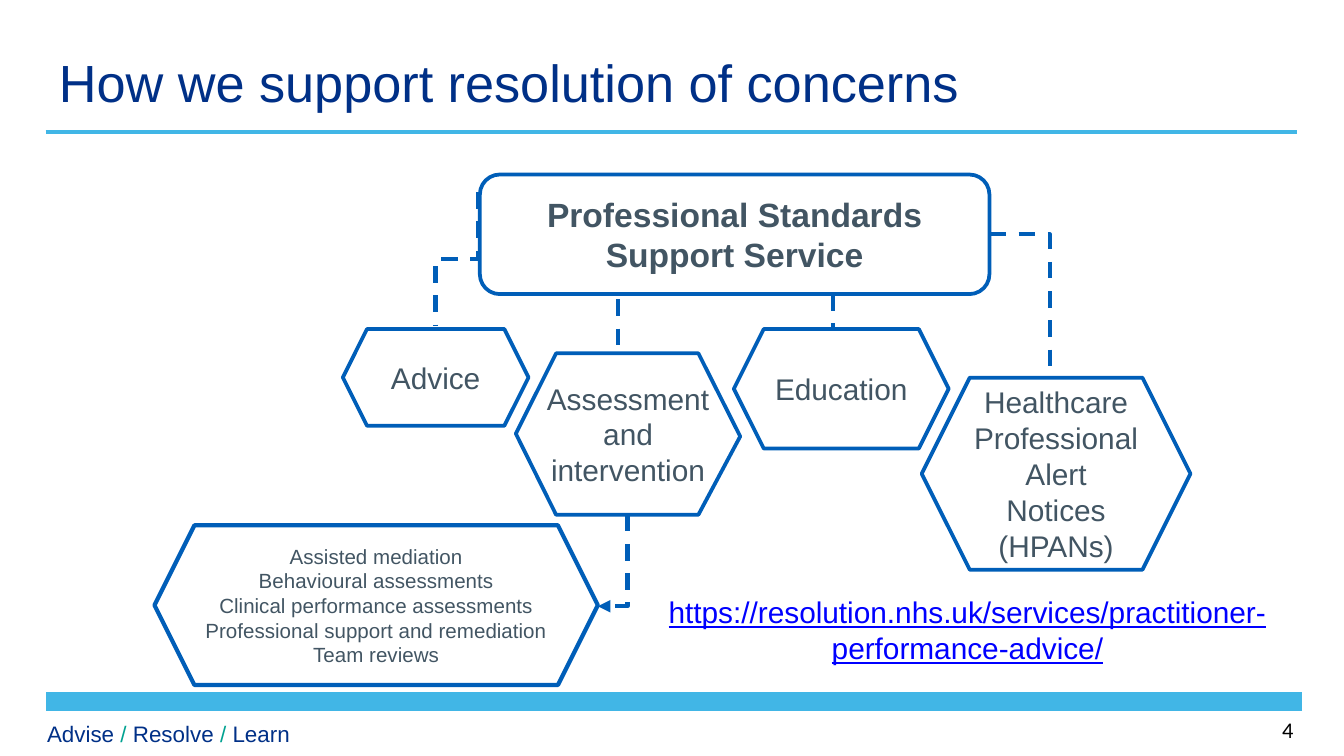
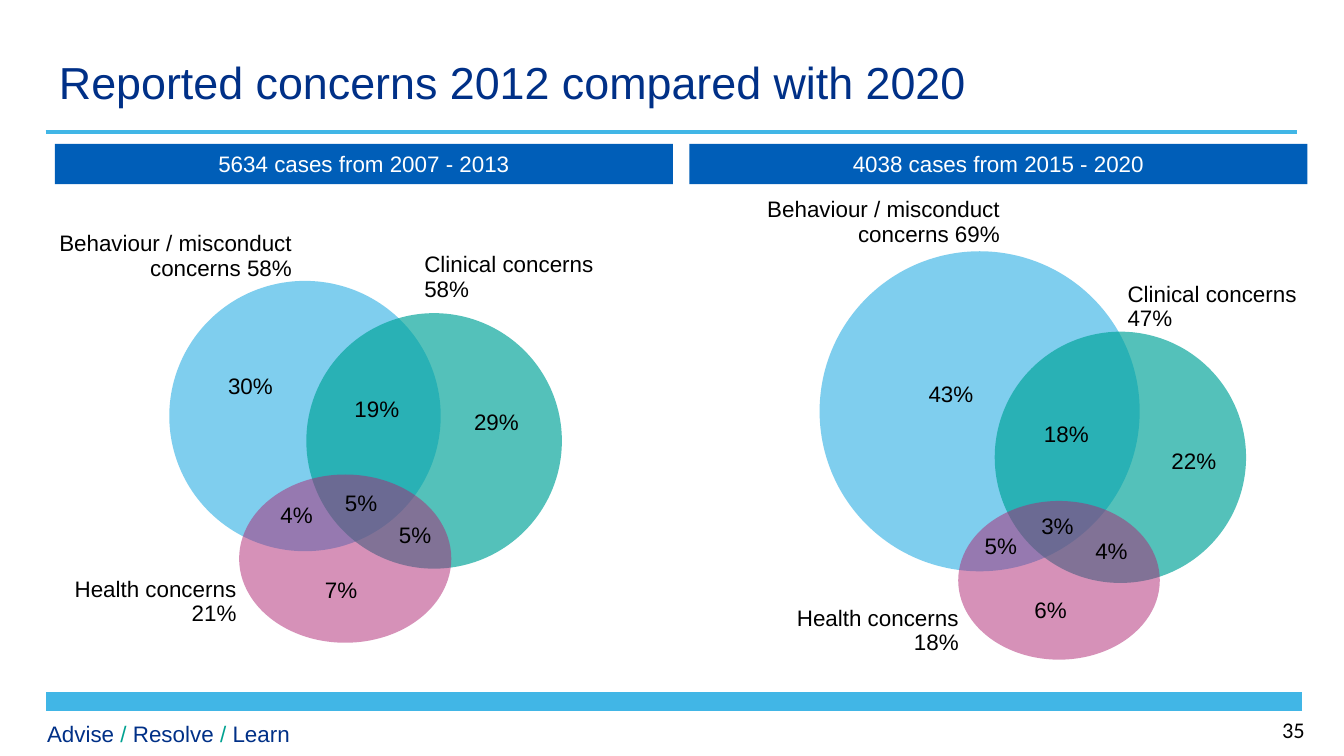
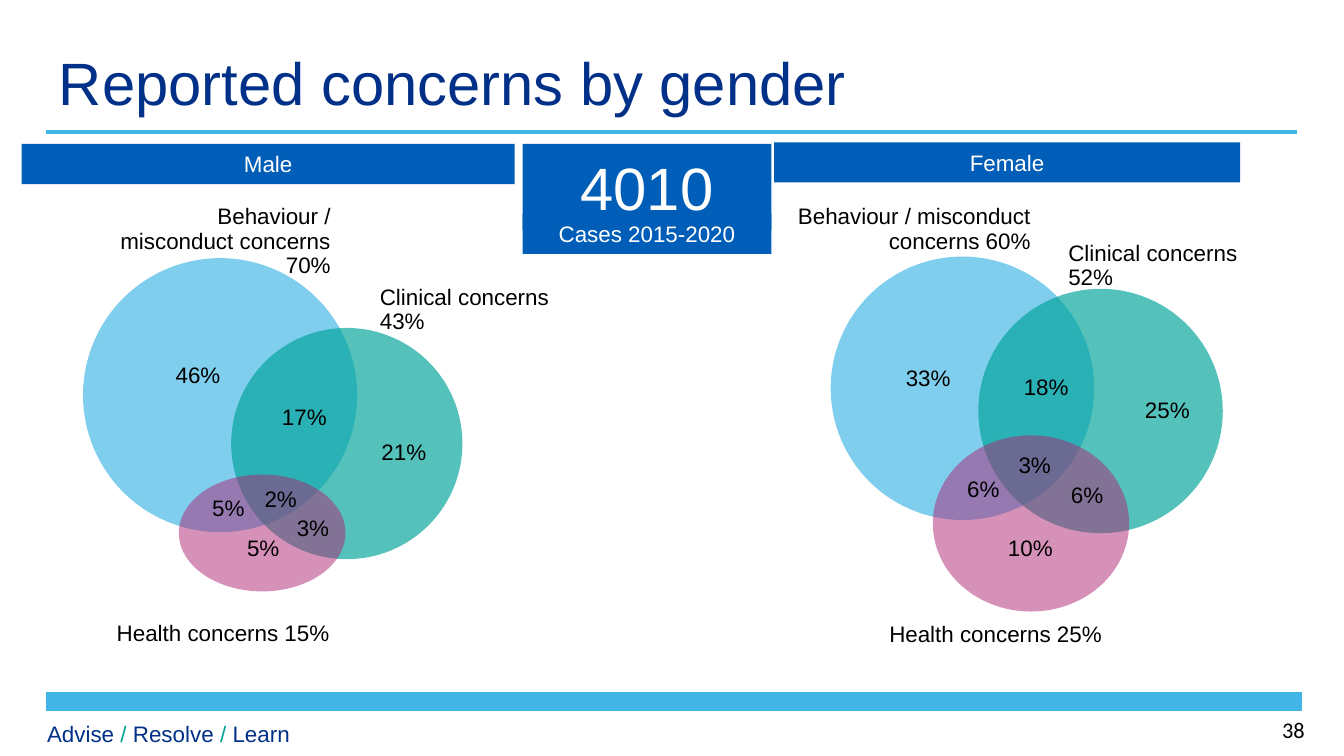
from dataclasses import dataclass

from lxml import etree
from pptx import Presentation
from pptx.dml.color import RGBColor
from pptx.enum.dml import MSO_LINE
from pptx.enum.shapes import MSO_CONNECTOR, MSO_SHAPE
from pptx.enum.text import MSO_ANCHOR, MSO_AUTO_SIZE, PP_ALIGN
from pptx.oxml.ns import qn
from pptx.util import Cm, Pt

STRAIGHT, ELBOW = MSO_CONNECTOR.STRAIGHT, MSO_CONNECTOR.ELBOW
HEXAGON, OVAL, RECTANGLE = MSO_SHAPE.HEXAGON, MSO_SHAPE.OVAL, MSO_SHAPE.RECTANGLE
ROUNDED = MSO_SHAPE.FLOWCHART_ALTERNATE_PROCESS
LEFT, CENTER, RIGHT = PP_ALIGN.LEFT, PP_ALIGN.CENTER, PP_ALIGN.RIGHT
TOP, MIDDLE, BOTTOM = MSO_ANCHOR.TOP, MSO_ANCHOR.MIDDLE, MSO_ANCHOR.BOTTOM
DASH = MSO_LINE.DASH
NO_AUTOFIT = MSO_AUTO_SIZE.NONE
TITLE_ONLY = 5


@dataclass(frozen=True)
class Theme:
    """Colours, fonts and type sizes of the deck."""
    navy: str = "003087"
    sky: str = "41B6E6"
    blue: str = "005EB8"
    teal: str = "00A499"
    slash: str = "00A291"
    plum: str = "AE2573"
    slate: str = "425563"
    link: str = "0000FF"
    black: str = "000000"
    white: str = "FFFFFF"
    font: str = "Arial"
    number_font: str = "Calibri"
    body: int = 12
    detail: int = 11
    branch: int = 16
    service: int = 18
    figure: int = 32


@dataclass(frozen=True)
class Box:
    """A rectangle in centimetres."""
    left: float
    top: float
    width: float
    height: float

    def inside(self, left, top, width, height):
        """Return a box placed relative to this one."""
        return Box(self.left + left, self.top + top, width, height)

    def point(self, x, y):
        """Return a point placed relative to this box."""
        return self.left + x, self.top + y

    def lengths(self):
        """Return the four lengths for python-pptx."""
        return [Cm(v) for v in (self.left, self.top, self.width, self.height)]


@dataclass(frozen=True)
class Venn:
    """Headline, set circles, set labels and region shares of one diagram."""
    box: Box
    heading: str
    circles: tuple
    labels: tuple
    shares: tuple


THEME = Theme()


def rgb(value):
    """Return a colour from its hex digits."""
    return RGBColor.from_string(value)


def write(frame, lines, size, color, align=LEFT, anchor=TOP, bold=None,
          font=THEME.font, spacing=None):
    """Fill a text frame with equally formatted lines."""
    frame.word_wrap = True
    frame.vertical_anchor = anchor
    for index, line in enumerate(lines):
        paragraph = frame.add_paragraph() if index else frame.paragraphs[0]
        paragraph.text = line
        paragraph.alignment = align
        paragraph.line_spacing = spacing
        paragraph.font.name = font
        paragraph.font.size = Pt(size)
        paragraph.font.bold = bold
        paragraph.font.color.rgb = rgb(color)


def add_text(slide, box, text, size=THEME.body, color=THEME.black, **style):
    """Add a wrapped text box and return its paragraph."""
    frame = slide.shapes.add_textbox(*box.lengths()).text_frame
    write(frame, [text], size, color, **style)
    return frame.paragraphs[0]


def add_filled(slide, kind, box, color, opacity=100):
    """Add a borderless filled shape."""
    shape = slide.shapes.add_shape(kind, *box.lengths())
    shape.shadow.inherit = False
    shape.fill.solid()
    shape.fill.fore_color.rgb = rgb(color)
    shape.line.fill.background()
    if opacity < 100:
        tint = shape._element.spPr.find(".//" + qn("a:srgbClr"))
        etree.SubElement(tint, qn("a:alpha"), val=str(opacity * 1000))
    return shape


def outline(shape, width=2):
    """Give a shape a blue outline and no fill."""
    shape.shadow.inherit = False
    shape.fill.background()
    shape.line.color.rgb = rgb(THEME.blue)
    shape.line.width = Pt(width)
    return shape


def add_line(slide, start, end, color, width, kind=STRAIGHT):
    """Add a connector without shadow."""
    line = slide.shapes.add_connector(kind, *[Cm(v) for v in (*start, *end)])
    line.line.color.rgb = rgb(color)
    line.line.width = Pt(width)
    etree.SubElement(line._element.spPr, qn("a:effectLst"))
    return line


def add_link(slide, start, end, kind=STRAIGHT, preset=None, downward=False):
    """Add a dashed connector, optionally leaving its start downwards."""
    if downward:
        middle_x, middle_y = (start[0] + end[0]) / 2, (start[1] + end[1]) / 2
        half_x, half_y = (end[0] - start[0]) / 2, (end[1] - start[1]) / 2
        start = middle_x - half_y, middle_y + half_x
        end = middle_x + half_y, middle_y - half_x
    link = add_line(slide, start, end, THEME.blue, 2.25, kind)
    link.line.dash_style = DASH
    properties = link._element.spPr
    if downward:
        properties.find(qn("a:xfrm")).set("rot", "5400000")
    if preset:
        properties.find(qn("a:prstGeom")).set("prst", preset)
    return link


def add_footer(slide, box, number):
    """Add the bottom band, motto and page number."""
    add_line(slide, box.point(box.width, 0), box.point(0, 0), THEME.sky, 10)
    motto = add_text(slide, box.inside(-0.22, 0.23, 6.3, 0.76), "")
    for text, color in (("Advise ", THEME.navy), ("/", THEME.slash),
                        (" Resolve ", THEME.navy), ("/", THEME.slash),
                        (" Learn", THEME.navy)):
        run = motto.add_run()
        run.text = text
        run.font.color.rgb = rgb(color)
    add_text(slide, box.inside(23.12, 0.15, 1.4, 0.76), str(number),
             font=THEME.number_font)


def add_page(deck, title, size, number):
    """Add a slide with its title, rule and footer."""
    slide = deck.slides.add_slide(deck.slide_layouts[TITLE_ONLY])
    heading = slide.shapes.title
    heading.left, heading.top, heading.width, heading.height = Box(
        0.86, 0.84, 19.23, 1.4).lengths()
    write(heading.text_frame, [title], size, THEME.navy, anchor=MIDDLE)
    heading.text_frame.auto_size = NO_AUTOFIT
    add_line(slide, (0.86, 2.49), (24.51, 2.49), THEME.sky, 2)
    add_footer(slide, Box(0.86, 13.26, 23.75, 1), number)
    return slide


def add_assessment(slide, box):
    """Draw the slightly uneven assessment hexagon."""
    corners = ((0, 1.52), (0.76, 0), (3.45, 0), (4.24, 1.57), (3.45, 3.05), (0.76, 3.05))
    points = [tuple(Cm(v) for v in box.point(*corner)) for corner in corners]
    builder = slide.shapes.build_freeform(*points[0])
    builder.add_line_segments(points[1:], close=True)
    write(outline(builder.convert_to_shape()).text_frame, ["Assessment and intervention"],
          THEME.branch, THEME.slate, CENTER, MIDDLE)


def add_support_list(slide, box):
    """Draw the hexagon listing the kinds of intervention."""
    support = outline(slide.shapes.add_shape(HEXAGON, *box.lengths()), 2.25)
    frame = support.text_frame
    write(frame, ["Assisted mediation", "Behavioural assessments",
                  "Clinical performance assessments",
                  "Professional support and remediation", "Team reviews"],
          THEME.detail, THEME.slate, CENTER, BOTTOM)
    frame.word_wrap = False
    frame.margin_left = frame.margin_right = frame.margin_top = frame.margin_bottom = 0


def add_service_tree(slide, box):
    """Draw the service, its branches and their connectors."""
    add_support_list(slide, box.inside(0, 6.63, 8.38, 3.02))
    service = outline(slide.shapes.add_shape(ROUNDED, *box.inside(6.15, 0, 9.63, 2.26).lengths()))
    write(service.text_frame, ["Professional Standards Support Service"],
          THEME.service, THEME.slate, CENTER, MIDDLE, bold=True)
    for name, place in (
            ("Advice", (3.56, 2.92, 3.51, 1.83)),
            ("Healthcare Professional Alert Notices (HPANs)", (14.5, 3.84, 5.08, 3.63)),
            ("Education", (10.95, 2.92, 4.06, 2.26))):
        branch = outline(slide.shapes.add_shape(HEXAGON, *box.inside(*place).lengths()))
        write(branch.text_frame, [name], THEME.branch, THEME.slate, CENTER, MIDDLE)
    add_assessment(slide, box.inside(6.83, 3.38, 4.24, 3.05))

    add_link(slide, box.point(6.12, 0.33), box.point(5.31, 2.87), ELBOW, downward=True)
    add_link(slide, box.point(15.78, 1.13), box.point(16.92, 3.84), ELBOW, "bentConnector2")
    add_link(slide, box.point(8.76, 2.36), box.point(8.76, 3.41))
    add_link(slide, box.point(12.83, 2.26), box.point(12.83, 2.92))
    to_list = add_link(slide, box.point(8.94, 6.43), box.point(8.38, 8.16),
                       ELBOW, "bentConnector2", downward=True)
    etree.SubElement(to_list.line._get_or_add_ln(), qn("a:tailEnd"), type="triangle")


def add_banner(slide, box, text, size=THEME.body):
    """Add a blue banner with centred white text."""
    banner = add_filled(slide, RECTANGLE, box, THEME.blue)
    write(banner.text_frame, [text], size, THEME.white, CENTER)


def add_venn(slide, venn):
    """Draw one diagram of behaviour, clinical and health concerns."""
    box = venn.box
    styles = ((THEME.sky, 67), (THEME.teal, 67), (THEME.plum, 50))
    for place, (color, opacity) in zip(venn.circles, styles):
        add_filled(slide, OVAL, box.inside(*place), color, opacity)
    for text, left, top in venn.shares:
        add_text(slide, box.inside(left, top, 1.5, 0.76), text)
    for (text, *place), align in zip(venn.labels, (RIGHT, LEFT, RIGHT)):
        add_text(slide, box.inside(*place), text, align=align, spacing=0.9)
    add_banner(slide, box.inside(0, 0, box.width, 0.76), venn.heading)


def add_case_total(slide, box):
    """Show the number of cases over its period."""
    add_banner(slide, box.inside(0, 0, box.width, 1.63), "4010", THEME.figure)
    add_banner(slide, box.inside(0, 1.32, box.width, 0.76), "Cases 2015-2020")


CASES_2013 = Venn(
    Box(1.04, 2.72, 11.68, 10), "5634 cases from 2007 - 2013",
    ((2.16, 2.59, 5.13, 5.11), (4.75, 3.2, 4.83, 4.83), (3.48, 6.25, 4.01, 3.18)),
    (("Behaviour / misconduct concerns 58%", -0.4, 1.55, 5.13, 1.57),
     ("Clinical concerns 58%", 6.73, 1.95, 4.5, 2.31),
     ("Health concerns 21%", -0.61, 8.08, 4.29, 1.57)),
    (("30%", 3.02, 4.19), ("19%", 5.41, 4.62), ("29%", 7.67, 4.87), ("4%", 4.01, 6.63),
     ("5%", 5.23, 6.4), ("5%", 6.25, 7.01), ("7%", 4.85, 8.05)))

CASES_2020 = Venn(
    Box(13.03, 2.72, 11.68, 10), "4038 cases from 2015 - 2020",
    ((2.46, 2.03, 6.05, 6.05), (5.77, 3.55, 4.75, 4.75), (5.08, 6.75, 3.81, 3)),
    (("Behaviour / misconduct concerns 69%", 0.46, 0.91, 5.66, 1.57),
     ("Clinical concerns 47%", 8.03, 2.51, 4.3, 2.31),
     ("Health concerns 18%", 1.12, 8.63, 4.22, 1.57)),
    (("43%", 4.27, 4.34), ("18%", 6.45, 5.1), ("22%", 8.86, 5.61), ("5%", 5.33, 7.21),
     ("3%", 6.4, 6.83), ("4%", 7.42, 7.31), ("6%", 6.27, 8.43)))

MALE = Venn(
    Box(0.41, 2.72, 9.32, 10), "Male",
    ((1.16, 2.16, 5.18, 5.18), (3.96, 3.48, 4.37, 4.37), (2.97, 6.25, 3.15, 2.21)),
    (("Behaviour / misconduct concerns 70%", 1.29, 1.04, 4.8, 1.93),
     ("Clinical concerns 43%", 6.52, 2.56, 4.5, 1.45),
     ("Health concerns 15%", 1.19, 8.91, 4.88, 2.34)),
    (("46%", 2.66, 3.99), ("17%", 4.67, 4.77), ("21%", 6.55, 5.43), ("5%", 3.35, 6.5),
     ("2%", 4.34, 6.32), ("3%", 4.95, 6.88), ("5%", 4.01, 7.26)))

FEMALE = Venn(
    Box(14.63, 2.69, 8.81, 10), "Female",
    ((1.07, 2.16, 4.98, 4.98), (3.86, 2.77, 4.62, 4.62), (3, 5.54, 3.71, 3.33)),
    (("Behaviour / misconduct concerns 60%", -0.08, 1.07, 5.18, 2.59),
     ("Clinical concerns 52%", 5.31, 1.76, 4.5, 1.73),
     ("Health concerns 25%", 1.52, 8.97, 4.93, 0.84)),
    (("33%", 2.24, 4.07), ("18%", 4.47, 4.24), ("25%", 6.76, 4.68), ("6%", 3.4, 6.17),
     ("3%", 4.37, 5.72), ("6%", 5.36, 6.28), ("10%", 4.17, 7.29)))


def main():
    """Build the three slides and save them."""
    deck = Presentation()
    deck.slide_width, deck.slide_height = Cm(25.4), Cm(14.29)

    support = add_page(deck, "How we support resolution of concerns", 28, 4)
    address = add_text(
        support, Box(12.29, 11.1, 11.99, 1.63),
        "https://resolution.nhs.uk/services/practitioner-performance-advice/",
        THEME.branch, THEME.link, align=CENTER)
    address.font.underline = True
    add_service_tree(support, Box(2.92, 3.3, 19.58, 9.65))

    years = add_page(deck, "Reported concerns 2012 compared with 2020", 24, 35)
    add_venn(years, CASES_2020)
    add_venn(years, CASES_2013)

    gender = add_page(deck, "Reported concerns by gender", 32, 38)
    add_venn(gender, MALE)
    add_case_total(gender, Box(9.88, 2.72, 4.7, 2.08))
    add_venn(gender, FEMALE)

    deck.save("out.pptx")


if __name__ == "__main__":
    main()
